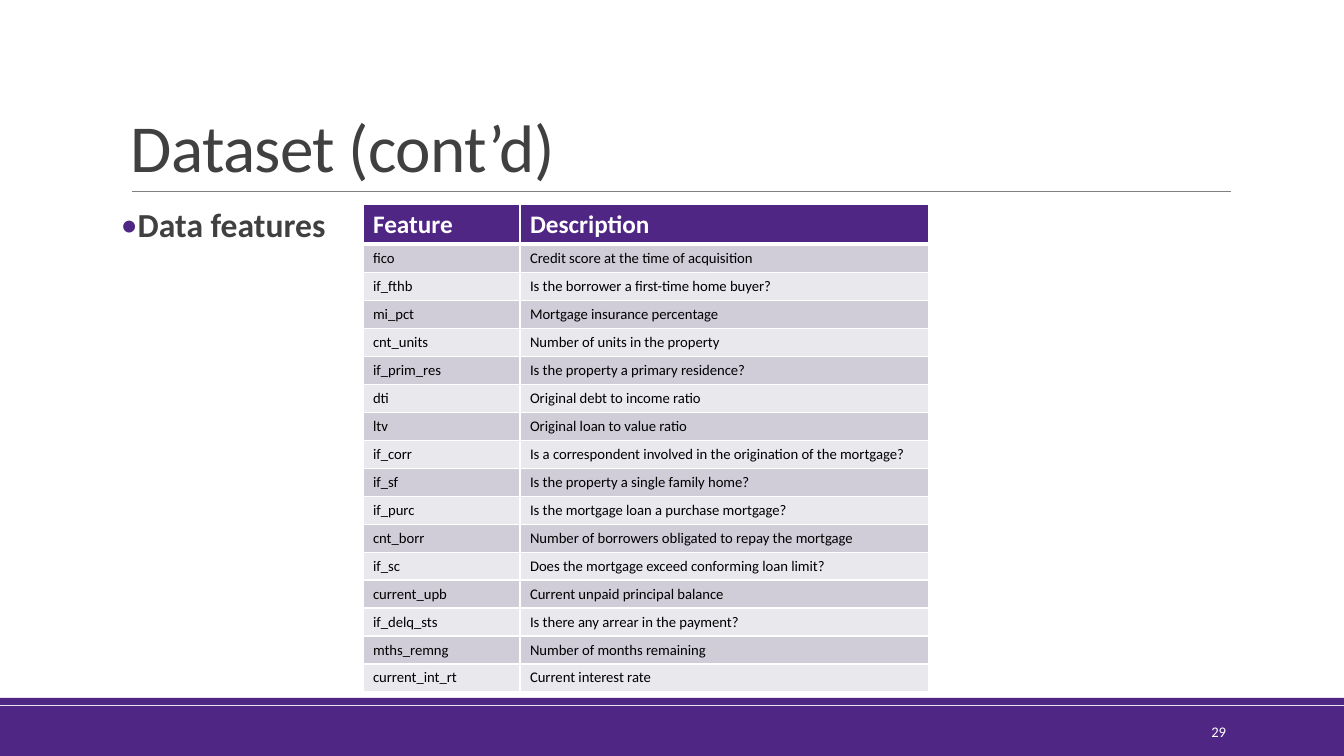
from lxml import etree
from pptx import Presentation
from pptx.dml.color import RGBColor
from pptx.enum import shapes, text
from pptx.oxml import ns
from pptx.util import Emu, Pt

TITLE = "Dataset (cont’d)"
BULLET = "Data features"
PAGE_NUMBER = "29"
HEADINGS = ("Feature", "Description")
FEATURES = [
    ("fico", "Credit score at the time of acquisition"),
    ("if_fthb", "Is the borrower a first-time home buyer?"),
    ("mi_pct", "Mortgage insurance percentage"),
    ("cnt_units", "Number of units in the property"),
    ("if_prim_res", "Is the property a primary residence?"),
    ("dti", "Original debt to income ratio"),
    ("ltv", "Original loan to value ratio"),
    ("if_corr", "Is a correspondent involved in the origination of the mortgage?"),
    ("if_sf", "Is the property a single family home?"),
    ("if_purc", "Is the mortgage loan a purchase mortgage?"),
    ("cnt_borr", "Number of borrowers obligated to repay the mortgage"),
    ("if_sc", "Does the mortgage exceed conforming loan limit?"),
    ("current_upb", "Current unpaid principal balance"),
    ("if_delq_sts", "Is there any arrear in the payment?"),
    ("mths_remng", "Number of months remaining"),
    ("current_int_rt", "Current interest rate"),
]

FONT = "Calibri"
PURPLE, WHITE, BLACK, INK, GREY = "4F2683", "FFFFFF", "000000", "404040", "808080"
BANDS = ("D0CDD9", "E9E8ED")
WIDTH, HEIGHT = 1344, 756
FOOTER_BARS = [(698, 7), (706, 50)]
TABLE_LEFT, TABLE_TOP = 363, 204
COLUMNS = (157, 409)
HEADING_HEIGHT, ROW_HEIGHT = 40, 28
INDENT = 16


def px(length):
    return Emu(round(length * 914400 / 100.8))


def color(value):
    return RGBColor.from_string(value)


def add_span(para, words, size, ink, bold=False):
    span = para.add_run()
    span.text = words
    font = span.font
    font.name, font.size, font.bold = FONT, Pt(size), bold
    font.color.rgb = color(ink)
    return span


def add_box(page, left, top, width, height, anchor):
    """Add a wrapping text box and return its frame."""
    frame = page.shapes.add_textbox(px(left), px(top), px(width), px(height)).text_frame
    frame.word_wrap = True
    frame.vertical_anchor = anchor
    return frame


def add_bullet(para):
    props = para._p.get_or_add_pPr()
    props.set("marL", str(px(INDENT)))
    props.set("indent", str(-px(INDENT)))
    tint = etree.SubElement(props, ns.qn("a:buClr"))
    etree.SubElement(tint, ns.qn("a:srgbClr"), val=PURPLE)
    etree.SubElement(props, ns.qn("a:buFont"), typeface=FONT)
    etree.SubElement(props, ns.qn("a:buChar"), char="•")


def add_borders(cell, top, bottom):
    """Draw white borders; top and bottom are widths in points."""
    props = cell._tc.get_or_add_tcPr()
    for side, points in (("L", 1), ("R", 1), ("T", top), ("B", bottom)):
        line = etree.SubElement(props, ns.qn(f"a:ln{side}"), w=str(Pt(points)))
        fill = etree.SubElement(line, ns.qn("a:solidFill"))
        etree.SubElement(fill, ns.qn("a:srgbClr"), val=WHITE)


def add_footer(page):
    for top, height in FOOTER_BARS:
        bar = page.shapes.add_shape(
            shapes.MSO_SHAPE.RECTANGLE, 0, px(top), px(WIDTH), px(height))
        bar.shadow.inherit = False
        bar.fill.solid()
        bar.fill.fore_color.rgb = color(PURPLE)
        bar.line.fill.background()
    para = add_box(page, 1092, 712, 144, 40, text.MSO_ANCHOR.MIDDLE).paragraphs[0]
    para.alignment = text.PP_ALIGN.RIGHT
    add_span(para, PAGE_NUMBER, 10.5, WHITE)


def add_title(page):
    rule = page.shapes.add_connector(
        shapes.MSO_CONNECTOR.STRAIGHT, px(132), px(191), px(1231), px(191))
    rule.line.color.rgb = color(GREY)
    rule.line.width = Pt(0.5)
    etree.SubElement(rule._element.spPr, ns.qn("a:effectLst"))
    para = add_box(page, 121, 31, 1109, 160, text.MSO_ANCHOR.BOTTOM).paragraphs[0]
    para.line_spacing = 0.85
    span = add_span(para, TITLE, 48, INK)
    span.font._element.set("spc", "-50")


def add_body(page):
    frame = add_box(page, 121, 204, 1109, 479, text.MSO_ANCHOR.TOP)
    frame.margin_left = frame.margin_right = 0
    para = frame.paragraphs[0]
    add_bullet(para)
    para.alignment = text.PP_ALIGN.JUSTIFY
    para.line_spacing = 0.9
    add_span(para, BULLET, 24, INK, bold=True)


def add_feature_table(page):
    rows = [HEADINGS, *FEATURES]
    height = HEADING_HEIGHT + ROW_HEIGHT * len(FEATURES)
    table = page.shapes.add_table(
        len(rows), len(COLUMNS), px(TABLE_LEFT), px(TABLE_TOP),
        px(sum(COLUMNS)), px(height)).table
    for column, width in zip(table.columns, COLUMNS):
        column.width = px(width)
    for index, row in enumerate(rows):
        heading = index == 0
        table.rows[index].height = px(HEADING_HEIGHT if heading else ROW_HEIGHT)
        for cell, words in zip(table.rows[index].cells, row):
            add_borders(cell, 3 if index == 1 else 1, 3 if heading else 1)
            cell.fill.solid()
            cell.fill.fore_color.rgb = color(PURPLE if heading else BANDS[(index - 1) % 2])
            add_span(cell.text_frame.paragraphs[0], words, 18 if heading else 10.5,
                     WHITE if heading else BLACK, bold=heading)


def main():
    deck = Presentation()
    deck.slide_width, deck.slide_height = px(WIDTH), px(HEIGHT)
    page = deck.slides.add_slide(deck.slide_layouts[6])
    add_footer(page)
    add_title(page)
    add_body(page)
    add_feature_table(page)
    deck.save("out.pptx")


if __name__ == "__main__":
    main()
